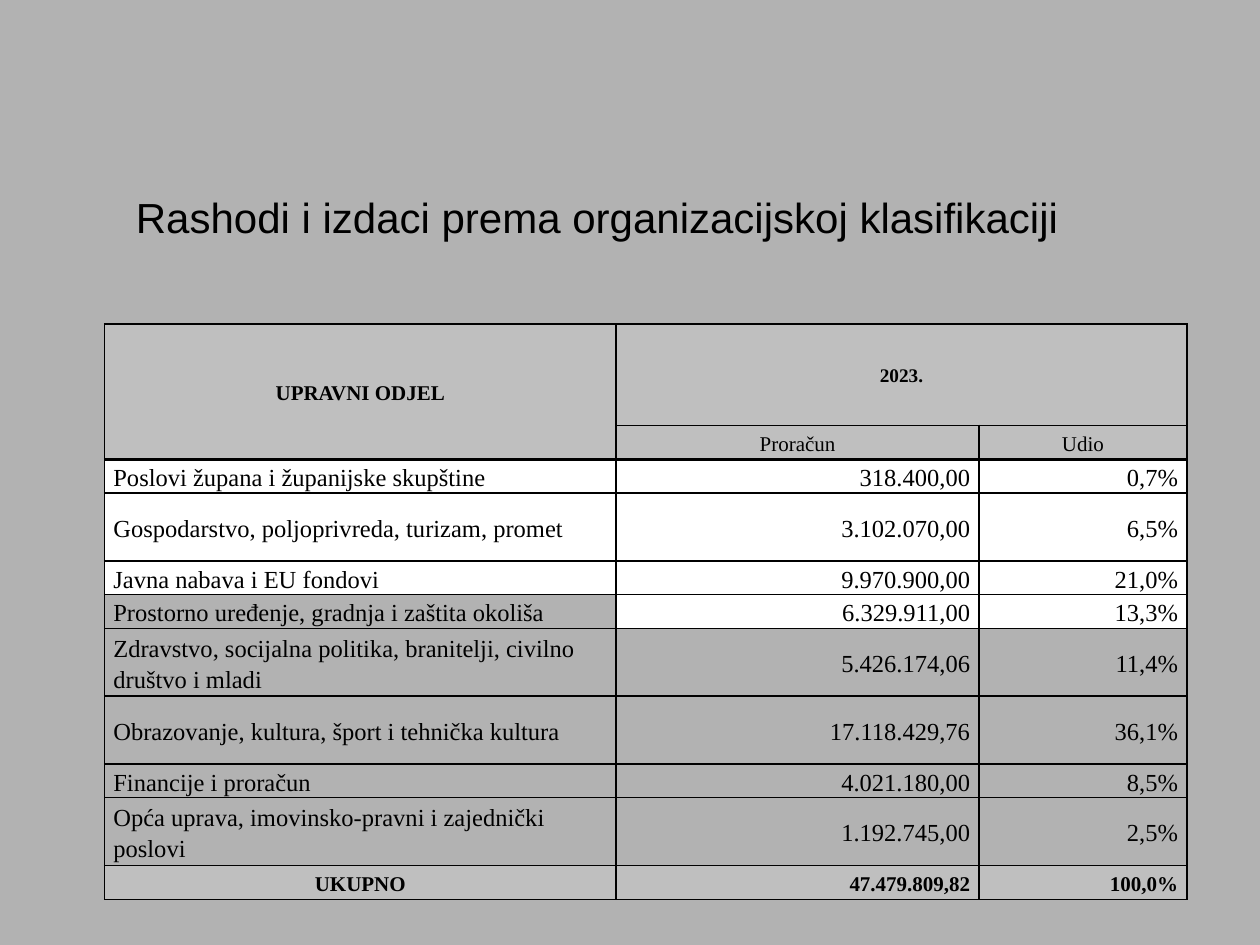
from dataclasses import dataclass
from typing import Optional

from lxml import etree
from pptx import Presentation
from pptx import util as u
from pptx.dml.color import RGBColor
from pptx.enum import text
from pptx.oxml.ns import qn

BLACK = RGBColor(0x00, 0x00, 0x00)
WHITE = RGBColor(0xFF, 0xFF, 0xFF)
SILVER = RGBColor(0xBF, 0xBF, 0xBF)
BACKDROP = RGBColor(0xB2, 0xB2, 0xB2)

LEFT, CENTER, RIGHT = text.PP_ALIGN.LEFT, text.PP_ALIGN.CENTER, text.PP_ALIGN.RIGHT
HEADING_FONT, TABLE_FONT = "Arial", "Times New Roman"
THIN, THICK = 1, 2.25
TABLE_LEFT, TABLE_TOP = 0.83, 2.57
COLUMN_WIDTHS = (4.06, 2.88, 1.65)
ROW_UNIT = 4.57 / 17
HEADER_UNITS = (3, 1)


@dataclass(frozen=True)
class Department:
    name: str
    budget: str
    share: str
    units: int = 1
    name_fill: Optional[RGBColor] = None
    value_fill: Optional[RGBColor] = None


@dataclass(frozen=True)
class Style:
    size: float = 14
    bold: bool = False
    align: text.PP_ALIGN = LEFT
    fill: Optional[RGBColor] = None
    top: float = THIN
    bottom: float = THIN


DEPARTMENTS = (
    Department("Poslovi župana i županijske skupštine", "318.400,00", "0,7%", 1, WHITE, WHITE),
    Department("Gospodarstvo, poljoprivreda, turizam, promet", "3.102.070,00", "6,5%", 2, WHITE, WHITE),
    Department("Javna nabava i EU fondovi", "9.970.900,00", "21,0%", 1, WHITE, WHITE),
    Department("Prostorno uređenje, gradnja i zaštita okoliša", "6.329.911,00", "13,3%", 1, None, WHITE),
    Department("Zdravstvo, socijalna politika, branitelji, civilno društvo i mladi", "5.426.174,06", "11,4%", 2),
    Department("Obrazovanje, kultura, šport i tehnička kultura", "17.118.429,76", "36,1%", 2),
    Department("Financije i proračun", "4.021.180,00", "8,5%"),
    Department("Opća uprava, imovinsko-pravni i zajednički poslovi", "1.192.745,00", "2,5%", 2),
)
TOTAL = Department("UKUPNO", "47.479.809,82", "100,0%", 1, SILVER, SILVER)


def add_border(cell, side: str, width: float) -> None:
    line = etree.SubElement(cell._tc.get_or_add_tcPr(), qn(f"a:ln{side}"), w=str(u.Pt(width)))
    solid = etree.SubElement(line, qn("a:solidFill"))
    etree.SubElement(solid, qn("a:srgbClr"), val=str(BLACK))


def style_cell(cell, wording: str, style: Style) -> None:
    for side, width in (("L", THIN), ("R", THIN), ("T", style.top), ("B", style.bottom)):
        add_border(cell, side, width)
    if style.fill is None:
        cell.fill.background()
    else:
        cell.fill.solid()
        cell.fill.fore_color.rgb = style.fill
    cell.margin_left = cell.margin_right = u.Inches(0.07)
    cell.margin_top = cell.margin_bottom = 0
    cell.vertical_anchor = text.MSO_ANCHOR.MIDDLE
    para = cell.text_frame.paragraphs[0]
    para.text = wording
    para.alignment = style.align
    para.line_spacing = 1.15
    para.font.size = u.Pt(style.size)
    para.font.bold = style.bold
    para.font.name = TABLE_FONT
    para.font.color.rgb = BLACK


def add_heading(page, wording: str) -> None:
    box = page.shapes.add_textbox(u.Inches(0.98), u.Inches(1.47), u.Inches(8.52), u.Inches(1.42))
    box.text_frame.word_wrap = True
    para = box.text_frame.paragraphs[0]
    para.text = wording
    para.font.size = u.Pt(24)
    para.font.name = HEADING_FONT
    para.font.color.rgb = BLACK


def fill_header(table) -> None:
    large = Style(12, True, CENTER, SILVER, bottom=THICK)
    year = Style(11, True, CENTER, SILVER)
    small = Style(12, False, CENTER, SILVER, bottom=THICK)
    entries = (
        ("UPRAVNI ODJEL", large), ("2023.", year), ("", year),
        ("", large), ("Proračun", small), ("Udio", small),
    )
    for index, (wording, style) in enumerate(entries):
        style_cell(table.cell(*divmod(index, len(COLUMN_WIDTHS))), wording, style)
    table.cell(0, 0).merge(table.cell(1, 0))
    table.cell(0, 1).merge(table.cell(0, 2))


def fill_row(table, row: int, entry: Department) -> None:
    total = entry is TOTAL
    size = 12 if total else 14
    top = THICK if row == len(HEADER_UNITS) else THIN
    name_style = Style(size, total, CENTER if total else LEFT, entry.name_fill, top)
    value_style = Style(size, total, RIGHT, entry.value_fill, top)
    style_cell(table.cell(row, 0), entry.name, name_style)
    style_cell(table.cell(row, 1), entry.budget, value_style)
    style_cell(table.cell(row, 2), entry.share, value_style)


def add_budget_table(page) -> None:
    entries = (*DEPARTMENTS, TOTAL)
    units = (*HEADER_UNITS, *(entry.units for entry in entries))
    table = page.shapes.add_table(
        len(units), len(COLUMN_WIDTHS), u.Inches(TABLE_LEFT), u.Inches(TABLE_TOP),
        u.Inches(sum(COLUMN_WIDTHS)), u.Inches(ROW_UNIT * sum(units)),
    ).table
    table.first_row = table.horz_banding = False
    for column, width in zip(table.columns, COLUMN_WIDTHS):
        column.width = u.Inches(width)
    for row, count in zip(table.rows, units):
        row.height = u.Inches(ROW_UNIT * count)
    fill_header(table)
    for row, entry in enumerate(entries, len(HEADER_UNITS)):
        fill_row(table, row, entry)


def main() -> None:
    deck = Presentation()
    deck.slide_width, deck.slide_height = u.Inches(10), u.Inches(7.5)
    page = deck.slides.add_slide(deck.slide_layouts[6])
    page.background.fill.solid()
    page.background.fill.fore_color.rgb = BACKDROP
    add_heading(page, "Rashodi i izdaci prema organizacijskoj klasifikaciji")
    add_budget_table(page)
    deck.save("out.pptx")


if __name__ == "__main__":
    main()
